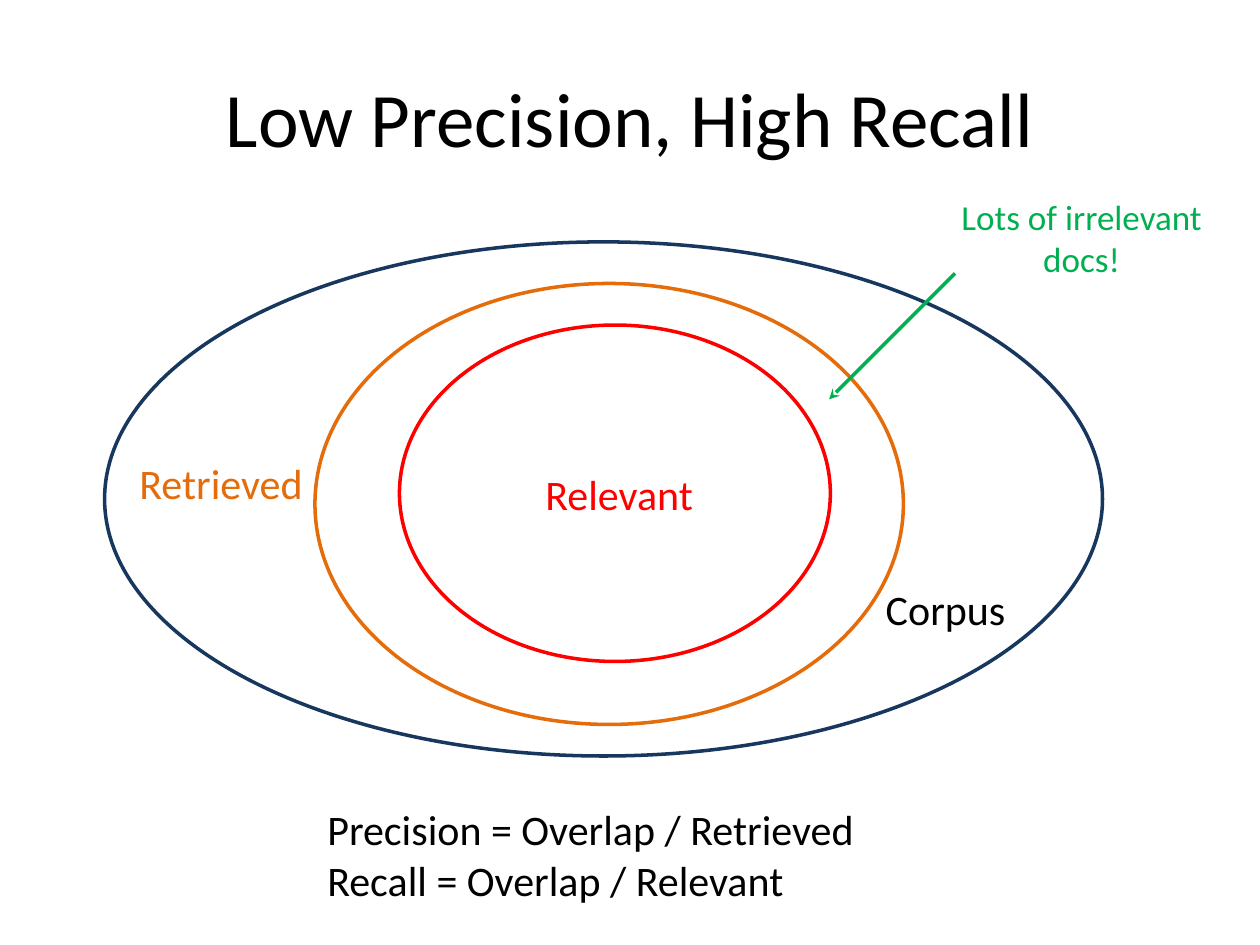
from lxml import etree
from pptx import Presentation
from pptx.dml.color import RGBColor
from pptx.enum.shapes import MSO_CONNECTOR, MSO_SHAPE
from pptx.enum.text import MSO_ANCHOR, PP_ALIGN
from pptx.oxml.ns import qn
from pptx.util import Inches, Pt

OVAL = MSO_SHAPE.OVAL
STRAIGHT = MSO_CONNECTOR.STRAIGHT
TOP, MIDDLE = MSO_ANCHOR.TOP, MSO_ANCHOR.MIDDLE
LEFT, CENTER = PP_ALIGN.LEFT, PP_ALIGN.CENTER

BLACK = RGBColor(0x00, 0x00, 0x00)
NAVY = RGBColor(0x17, 0x37, 0x5E)
RED = RGBColor(0xFF, 0x00, 0x00)
ORANGE = RGBColor(0xE4, 0x6C, 0x0A)
GREEN = RGBColor(0x00, 0xB0, 0x50)

LINE_WIDTH = Pt(2)

prs = Presentation()
prs.slide_width = Inches(10)
prs.slide_height = Inches(7.5)
slide = prs.slides.add_slide(prs.slide_layouts[6])
shapes = slide.shapes

document_sets = [
    ((0.83, 1.92, 7.92, 4.08), NAVY),
    ((3.17, 2.58, 3.42, 2.67), RED),
    ((2.5, 2.25, 4.67, 3.5), ORANGE),
]
for bounds, color in document_sets:
    document_set = shapes.add_shape(OVAL, *map(Inches, bounds))
    document_set.shadow.inherit = False
    document_set.fill.background()
    document_set.line.color.rgb = color
    document_set.line.width = LINE_WIDTH

irrelevant_arrow = shapes.add_connector(
    STRAIGHT, Inches(7.58), Inches(2.17), Inches(6.58), Inches(3.17)
)
irrelevant_arrow.line.color.rgb = GREEN
irrelevant_arrow.line.width = LINE_WIDTH
etree.SubElement(irrelevant_arrow.line._get_or_add_ln(), qn("a:tailEnd"), type="stealth")
etree.SubElement(irrelevant_arrow._element.spPr, qn("a:effectLst"))

captions = [
    ("Low Precision, High Recall", (0.5, 0.3, 9, 1.25), 44, BLACK, CENTER, MIDDLE),
    ("Corpus", (6.67, 4.58, 1.67, 0.5), 24, BLACK, CENTER, TOP),
    ("Retrieved", (0.92, 3.58, 1.67, 0.5), 24, ORANGE, CENTER, TOP),
    ("Relevant", (4.08, 3.67, 1.67, 0.5), 24, RED, CENTER, TOP),
    ("Precision = Overlap / Retrieved\nRecall = Overlap / Relevant",
     (2.5, 6.33, 4.67, 0.91), 24, BLACK, LEFT, TOP),
    ("Lots of irrelevant docs!", (7.5, 1.5, 2.17, 0.77), 20, GREEN, CENTER, TOP),
]
for wording, bounds, size, color, alignment, anchor in captions:
    frame = shapes.add_textbox(*map(Inches, bounds)).text_frame
    frame_format = {"word_wrap": True, "vertical_anchor": anchor, "text": wording}
    for attribute, value in frame_format.items():
        setattr(frame, attribute, value)
    font_format = {"name": "Calibri", "size": Pt(size)}
    for paragraph in frame.paragraphs:
        paragraph.alignment = alignment
        font = paragraph.runs[0].font
        for attribute, value in font_format.items():
            setattr(font, attribute, value)
        font.color.rgb = color

prs.save("out.pptx")
